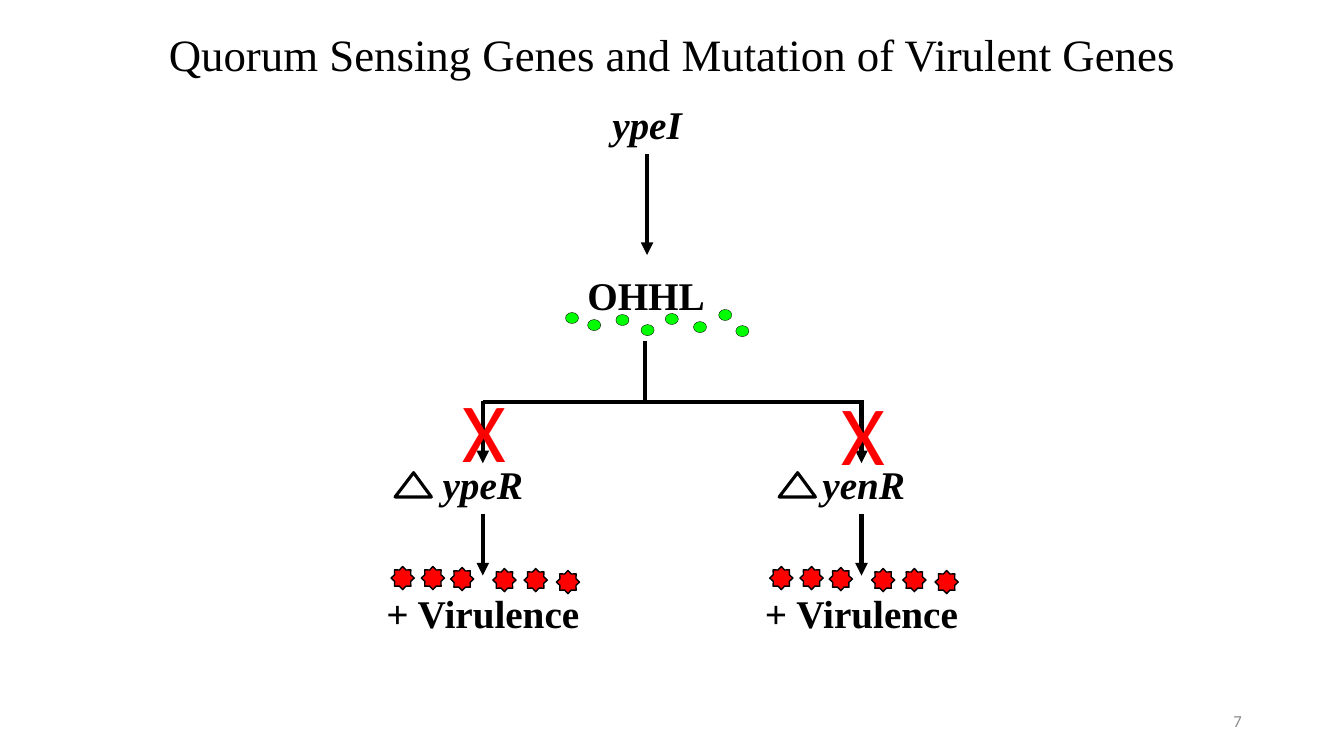
from pptx import Presentation
from pptx.dml.color import RGBColor
from pptx.enum.shapes import MSO_CONNECTOR, MSO_SHAPE
from pptx.enum.text import MSO_ANCHOR, PP_ALIGN
from pptx.oxml.ns import qn
from pptx.util import Inches, Pt
from lxml import etree

BLACK = RGBColor(0, 0, 0)
RED = RGBColor(255, 0, 0)
GREEN = RGBColor(0, 255, 0)
GRAY = RGBColor(0x8C, 0x8C, 0x8C)

LINE = MSO_CONNECTOR.STRAIGHT
STAR = MSO_SHAPE.STAR_8_POINT
DOT = MSO_SHAPE.FLOWCHART_CONNECTOR
DELTA = MSO_SHAPE.ISOSCELES_TRIANGLE
LEFT, MID, RIGHT = PP_ALIGN.LEFT, PP_ALIGN.CENTER, PP_ALIGN.RIGHT
TOP, MIDDLE = MSO_ANCHOR.TOP, MSO_ANCHOR.MIDDLE

SERIF, SANS = "Times New Roman", "Calibri"

# Grid of 40 columns by 30 rows
WIDTH, HEIGHT = Inches(13.33), Inches(7.5)
COL, ROW = WIDTH / 40, HEIGHT / 30

# Signal molecules: column and row
DOTS = [(16.83, 12.4), (17.49, 12.68), (18.33, 12.48), (19.08, 12.88),
        (19.8, 12.44), (20.64, 12.76), (21.39, 12.28), (21.9, 12.92)]
# Virulence factors: columns from the branch axis, and row
STARS = [(-2.73, 22.48), (-1.83, 22.48), (-0.96, 22.52),
         (0.3, 22.56), (1.23, 22.56), (2.19, 22.64)]


def place(*cells):
    """Turn column, row pairs into slide lengths."""
    return [round(n * (ROW if i % 2 else COL)) for i, n in enumerate(cells)]


def add_text(slide, text, box, size, font=SERIF, color=BLACK, align=MID,
             anchor=TOP, wrap=True):
    frame = slide.shapes.add_textbox(*place(*box)).text_frame
    frame.word_wrap = wrap
    frame.vertical_anchor = anchor
    para = frame.paragraphs[0]
    para.text = text
    para.alignment = align
    para.font.name = font
    para.font.size = Pt(size)
    para.font.color.rgb = color
    return para


def add_label(slide, text, mid, row, italic=False):
    wide = 6.63
    para = add_text(slide, text, (mid - wide / 2, row, wide, 2.28), 28)
    para.font.bold = True
    para.font.italic = italic


def add_line(slide, x1, y1, x2, y2, arrow=False):
    link = slide.shapes.add_connector(LINE, *place(x1, y1, x2, y2))
    link.line.color.rgb = BLACK
    link.line.width = Pt(3)
    if arrow:
        etree.SubElement(link.line._get_or_add_ln(), qn("a:tailEnd"),
                         type="triangle")
    etree.SubElement(link._element.spPr, qn("a:effectLst"))


def add_mark(slide, kind, box, width, fill=None):
    mark = slide.shapes.add_shape(kind, *place(*box))
    mark.shadow.inherit = False
    if fill is None:
        mark.fill.background()
    else:
        mark.fill.solid()
        mark.fill.fore_color.rgb = fill
    mark.line.color.rgb = BLACK
    mark.line.width = Pt(width)
    return mark


def add_branch(slide, gene, axis, mid, delta, cross):
    # Blocked arrow down to the deleted gene
    add_line(slide, axis, 15.92, axis, 18.38, arrow=True)
    add_text(slide, "X", (axis - 0.9, cross, 1.92, 4.44), 60, SANS, RED,
             LEFT, wrap=False)
    add_label(slide, gene, mid, 18.08, italic=True)
    sign = add_mark(slide, DELTA, (delta, 18.76, 1.08, 0.96), 2.25)
    sign.adjustments[0] = 0.51

    # Virulence outcome
    add_line(slide, axis, 20.38, axis, 22.84, arrow=True)
    for shift, row in STARS:
        add_mark(slide, STAR, (axis + shift, row, 0.69, 0.92), 1, RED)
    add_label(slide, "+ Virulence", axis, 23.2)


def main():
    deck = Presentation()
    deck.slide_width, deck.slide_height = WIDTH, HEIGHT
    slide = deck.slides.add_slide(deck.slide_layouts[6])

    # Title and page number
    title = add_text(slide, "Quorum Sensing Genes and Mutation of Virulent Genes",
                     (2.76, 0.04, 34.5, 4.48), 32, anchor=MIDDLE)
    title.line_spacing = 0.9
    add_text(slide, "7", (28.26, 27.8, 9, 1.6), 12, SANS, GRAY, RIGHT, MIDDLE)

    # Signal gene and its product
    add_label(slide, "ypeI", 19.26, 3.8, italic=True)
    add_line(slide, 19.26, 6.12, 19.26, 10.12, arrow=True)
    add_label(slide, "OHHL", 19.23, 10.56)
    for col, row in DOTS:
        add_mark(slide, DOT, (col, row, 0.39, 0.44), 0.25, GREEN)

    # Fork to the two receptor genes
    add_line(slide, 19.2, 13.52, 19.2, 15.96)
    add_line(slide, 14.37, 15.96, 25.71, 15.96)
    add_branch(slide, "ypeR", 14.37, 14.37, 11.76, 14.84)
    add_branch(slide, "yenR", 25.64, 25.71, 23.19, 14.96)

    deck.save("out.pptx")


if __name__ == "__main__":
    main()
